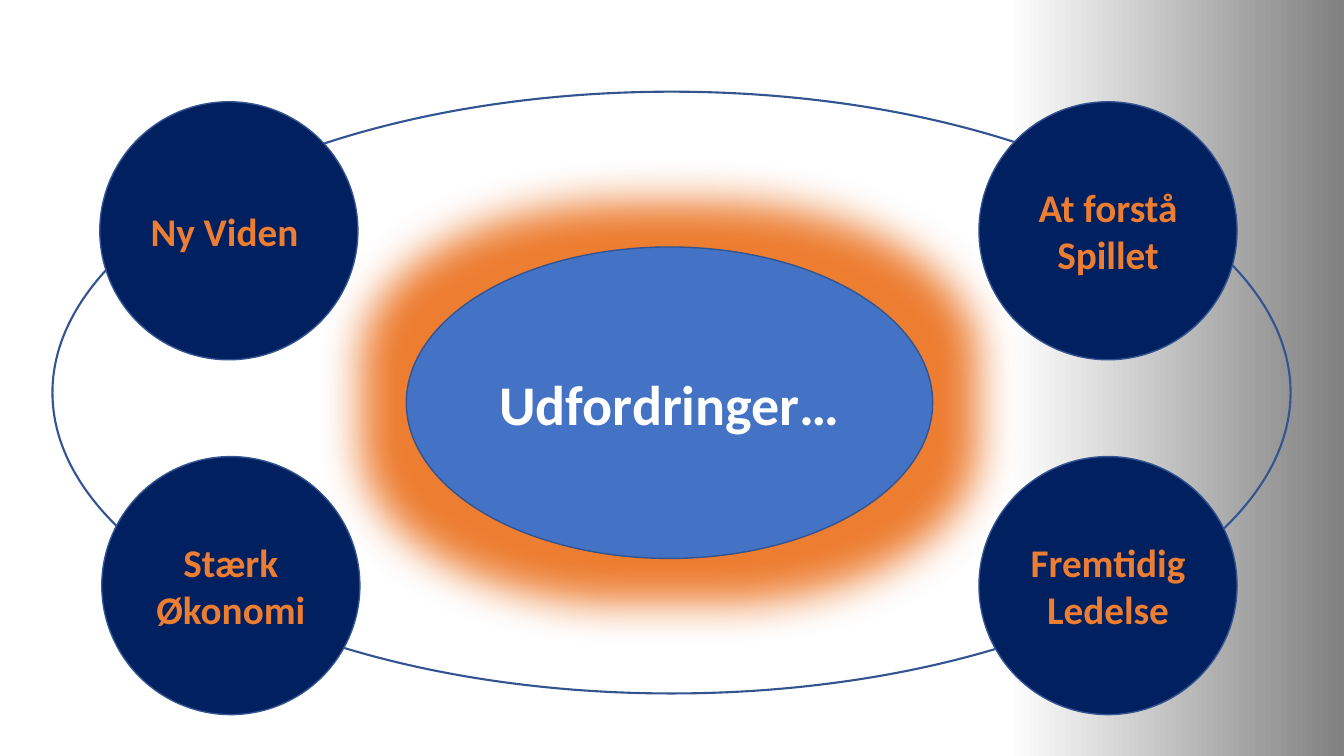
from dataclasses import dataclass

import pptx
import pptx.dml.color
import pptx.enum.shapes
import pptx.enum.text
import pptx.oxml
import pptx.oxml.ns
import pptx.util
from pptx.util import Inches

NAVY, BLUE, ORANGE, WHITE, OUTLINE = "002060", "4472C4", "ED7D31", "FFFFFF", "325491"
DIAMETER = 2.56
TOP_ROW, BOTTOM_ROW = 1.01, 4.53
RIGHT_COLUMN = 9.71


@dataclass
class Topic:
    text: str
    left: float
    top: float


TOPICS = [
    Topic("Ny Viden ", 0.99, TOP_ROW),
    Topic("At forstå Spillet", RIGHT_COLUMN, TOP_ROW),
    Topic("Fremtidig\vLedelse", RIGHT_COLUMN, BOTTOM_ROW),
    Topic("Stærk Økonomi", 1.01, BOTTOM_ROW),
]


def set_color(color, value: str) -> None:
    color.rgb = pptx.dml.color.RGBColor.from_string(value)


def add_ellipse(s, left: float, top: float, width: float, height: float,
                fill: str = "", line_width: float = 1):
    sp = s.shapes.add_shape(pptx.enum.shapes.MSO_SHAPE.OVAL, Inches(left),
                            Inches(top), Inches(width), Inches(height))
    sp.shadow.inherit = False
    if fill:
        sp.fill.solid()
        set_color(sp.fill.fore_color, fill)
    else:
        sp.fill.background()
    set_color(sp.line.color, OUTLINE)
    sp.line.width = pptx.util.Pt(line_width)
    return sp


def write_text(sp, text: str, size: float, color: str, margin: float = 0.1) -> None:
    tf = sp.text_frame
    tf.word_wrap = True
    tf.vertical_anchor = pptx.enum.text.MSO_ANCHOR.MIDDLE
    tf.margin_left = tf.margin_right = Inches(margin)
    p = tf.paragraphs[0]
    p.text = text
    p.alignment = pptx.enum.text.PP_ALIGN.CENTER
    for r in p.runs:
        r.font.name = "Calibri"
        r.font.size = pptx.util.Pt(size)
        r.font.bold = True
        set_color(r.font.color, color)


def add_glow(sp, color: str, radius: float) -> None:
    effects = sp.element.spPr.find(pptx.oxml.ns.qn("a:effectLst"))
    effects.append(pptx.oxml.parse_xml(
        f'<a:glow {pptx.oxml.ns.nsdecls("a")} rad="{Inches(radius)}">'
        f'<a:srgbClr val="{color}"/></a:glow>'))


def set_background(s) -> None:
    fill = s.background.fill
    fill.gradient()
    fill.gradient_angle = 0
    for stop, position, color in zip(fill.gradient_stops, (0.75, 1), (WHITE, "808080")):
        stop.position = position
        set_color(stop.color, color)


def main() -> None:
    prs = pptx.Presentation()
    prs.slide_width, prs.slide_height = Inches(13.33), Inches(7.5)
    s = prs.slides.add_slide(prs.slide_layouts[6])
    set_background(s)

    # Ring that links the topics
    add_ellipse(s, 0.52, 0.91, 12.28, 5.97, line_width=1.5)

    # Glowing centre
    centre = add_ellipse(s, 4.03, 2.45, 5.22, 3.09, fill=BLUE)
    add_glow(centre, ORANGE, 0.88)
    write_text(centre, "Udfordringer…", 40, WHITE, margin=0)

    # Topic circles
    for topic in TOPICS:
        sp = add_ellipse(s, topic.left, topic.top, DIAMETER, DIAMETER, fill=NAVY)
        write_text(sp, topic.text, 28, ORANGE)

    prs.save("out.pptx")


if __name__ == "__main__":
    main()
